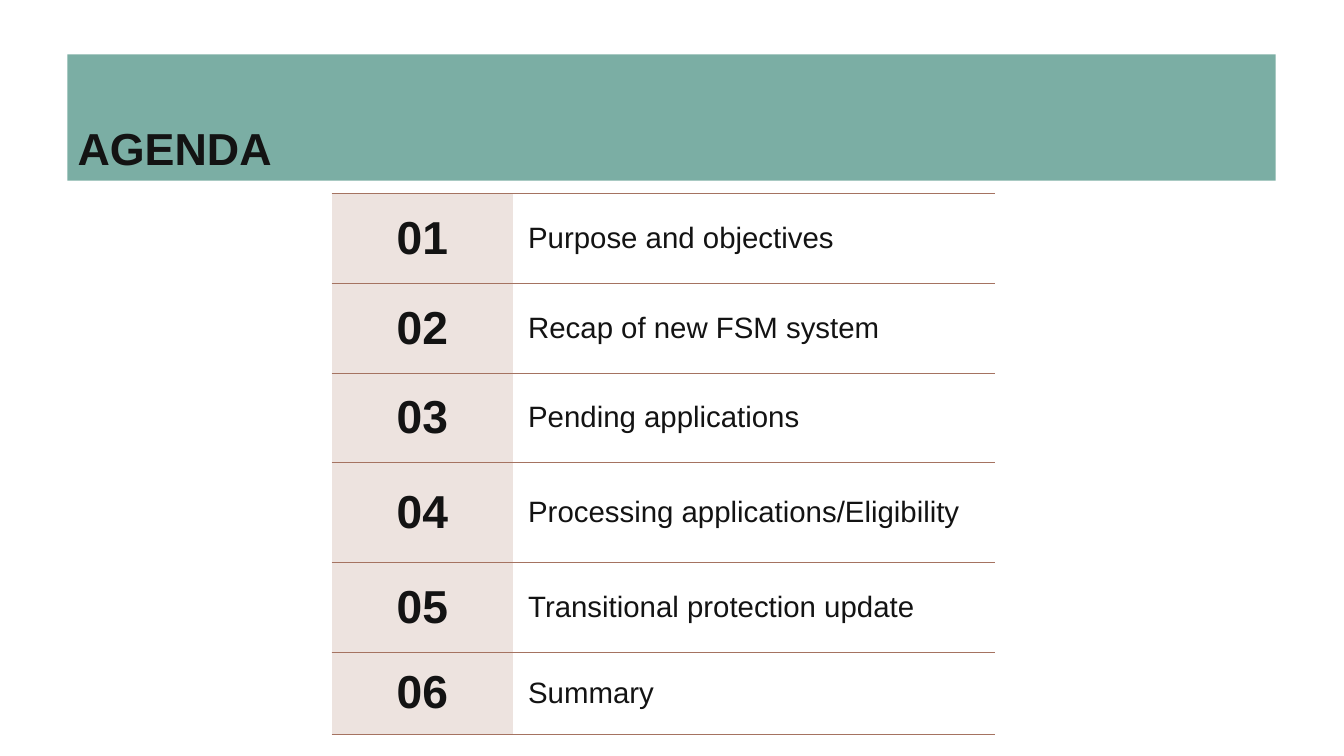
"""Build the agenda slide with its numbered list of topics."""
import lxml.etree
import pptx
import pptx.dml.color
import pptx.enum.text
import pptx.oxml.ns
import pptx.util

Cm = pptx.util.Cm
Pt = pptx.util.Pt
RGB = pptx.dml.color.RGBColor
ALIGN = pptx.enum.text.PP_ALIGN
ANCHOR = pptx.enum.text.MSO_ANCHOR
qn = pptx.oxml.ns.qn

TITLE = "AGENDA"
TABLES = [
    (16.43 - 11.55, [
        ("Purpose and objectives", 2.26),
        ("Recap of new FSM system", 2.26),
        ("Pending applications", 2.26),
        ("Processing applications/Eligibility", 2.52),
        ("Transitional protection update", 2.26),
    ]),
    (16.43, [("Summary", 2.01)]),
]
LEFT = 8.36
WIDTHS = (4.57, 12.14)
INSET = 0.38

GREEN = RGB(0x7B, 0xAE, 0xA4)
BLUSH = RGB(0xED, 0xE3, 0xDF)
RUST = RGB(0xA5, 0x73, 0x61)
INK = RGB(0x13, 0x13, 0x13)


def write(para, text, size, bold):
    run = para.add_run()
    run.text = text
    run.font.name = "Arial"
    run.font.size = Pt(size)
    run.font.bold = bold
    run.font.color.rgb = INK


def rule(cell):
    props = cell._tc.get_or_add_tcPr()
    for side in "LRTB":
        line = lxml.etree.SubElement(props, qn("a:ln" + side), w=str(Pt(0.5)))
        if side in "TB":
            fill = lxml.etree.SubElement(line, qn("a:solidFill"))
            lxml.etree.SubElement(fill, qn("a:srgbClr"), val=str(RUST))
        else:
            lxml.etree.SubElement(line, qn("a:noFill"))


def fill_cell(cell, text, size, lead):
    rule(cell)
    cell.margin_left = cell.margin_right = Cm(INSET)
    cell.margin_top = cell.margin_bottom = Cm(INSET)
    cell.vertical_anchor = ANCHOR.MIDDLE
    if lead:
        cell.fill.solid()
        cell.fill.fore_color.rgb = BLUSH
    else:
        cell.fill.background()
    para = cell.text_frame.paragraphs[0]
    para.alignment = ALIGN.CENTER if lead else ALIGN.LEFT
    write(para, text, size, lead)


def add_list(slide, top, items, start):
    high = sum(item[1] for item in items)
    frame = slide.shapes.add_table(len(items), 2, Cm(LEFT), Cm(top),
                                   Cm(sum(WIDTHS)), Cm(high))
    table = frame.table
    table.first_row = table.horz_banding = False
    for col, width in zip(table.columns, WIDTHS):
        col.width = Cm(width)
    for i, (topic, height) in enumerate(items):
        table.rows[i].height = Cm(height)
        fill_cell(table.cell(i, 0), f"{start + i:02d}", 33, True)
        fill_cell(table.cell(i, 1), topic, 21, False)


def add_title(slide):
    title = slide.shapes.title
    title.left, title.top = Cm(1.7), Cm(1.37)
    title.width, title.height = Cm(30.45), Cm(3.18)
    title.fill.solid()
    title.fill.fore_color.rgb = GREEN
    title.text_frame.vertical_anchor = ANCHOR.BOTTOM
    para = title.text_frame.paragraphs[0]
    para.alignment = ALIGN.LEFT
    para.line_spacing = 0.9
    write(para, TITLE, 32, True)


def main():
    deck = pptx.Presentation()
    deck.slide_width, deck.slide_height = Cm(33.87), Cm(19.05)
    slide = deck.slides.add_slide(deck.slide_layouts[5])
    add_title(slide)
    start = 1
    for top, items in TABLES:
        add_list(slide, top, items, start)
        start += len(items)
    deck.save("out.pptx")


if __name__ == "__main__":
    main()
